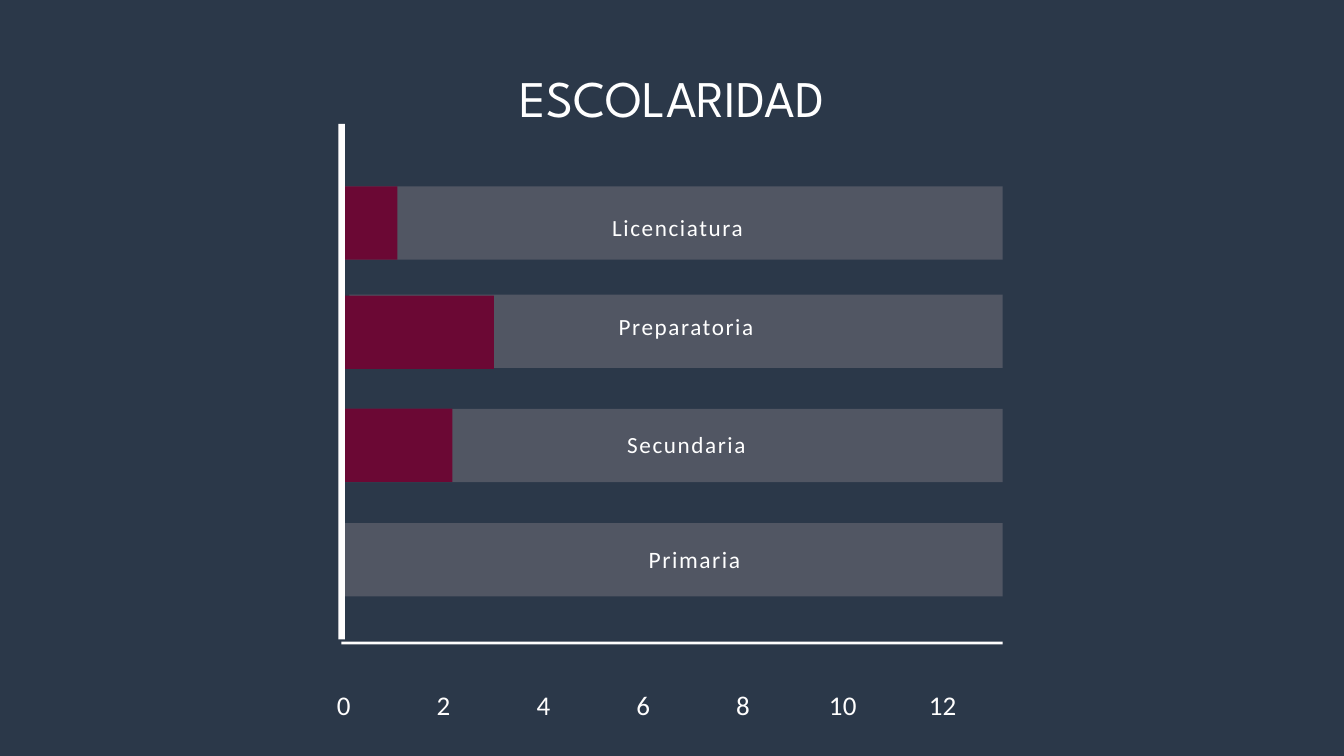
from dataclasses import dataclass

import lxml.etree
import pptx
import pptx.dml.color
import pptx.enum.shapes
import pptx.enum.text
import pptx.oxml.ns
import pptx.util

Pt = pptx.util.Pt
ALIGN = pptx.enum.text.PP_ALIGN

WHITE = "FFFFFF"
AXIS_WHITE = "FFFEFE"
TRACK_RIGHT = 1074.2
BAR_HEIGHT = 78.5


@dataclass(frozen=True)
class Level:
    name: str
    middle: float
    value_left: float
    value_width: float
    value_middle: float
    label_left: float
    label_top: float
    label_width: float = 370.8
    track_width: float = 708.5
    size: float = 24.8
    leading: float = 41.3
    align: ALIGN = ALIGN.CENTER


LEVELS = [
    Level("Licenciatura", 239, 365.4, 60.5, 239, 655.9, 217.4, align=ALIGN.LEFT),
    Level("Preparatoria", 355, 367.2, 162, 356, 637.2, 322.6,
          label_width=195.8, track_width=699.8),
    Level("Secundaria", 477.4, 365.8, 118.8, 477, 550.1, 449.3),
    Level("Primaria", 599.8, 365.8, 0, 599.8, 558.7, 572.4, size=25.2, leading=42.1),
]


def color(hex_code: str) -> pptx.dml.color.RGBColor:
    return pptx.dml.color.RGBColor.from_string(hex_code)


def add_bar(slide, left: float, top: float, width: float, height: float,
            fill: str, opacity: int = 100) -> None:
    bar = slide.shapes.add_shape(pptx.enum.shapes.MSO_SHAPE.RECTANGLE,
                                 Pt(left), Pt(top), Pt(width), Pt(height))
    bar.shadow.inherit = False
    bar.line.fill.background()
    bar.fill.solid()
    bar.fill.fore_color.rgb = color(fill)
    if opacity < 100:
        tint = bar.fill._xPr.find(".//" + pptx.oxml.ns.qn("a:srgbClr"))
        alpha = lxml.etree.SubElement(tint, pptx.oxml.ns.qn("a:alpha"))
        alpha.set("val", str(opacity * 1000))


def add_text(slide, text: str, *, left: float, top: float, width: float, height: float,
             size: float, leading: float, font: str = "Calibri", fill: str = WHITE,
             align: ALIGN = ALIGN.CENTER, spacing: float = 0) -> None:
    frame = slide.shapes.add_textbox(Pt(left), Pt(top), Pt(width), Pt(height)).text_frame
    frame.word_wrap = True
    frame.auto_size = pptx.enum.text.MSO_AUTO_SIZE.SHAPE_TO_FIT_TEXT
    frame.margin_left = frame.margin_right = frame.margin_top = frame.margin_bottom = Pt(0)
    paragraph = frame.paragraphs[0]
    paragraph.alignment = align
    paragraph.line_spacing = Pt(leading)
    run = paragraph.add_run()
    run.text = text
    run.font.size = Pt(size)
    run.font.name = font
    run.font.color.rgb = color(fill)
    if spacing:
        run._r.get_or_add_rPr().set("spc", str(round(spacing * 100)))


def main() -> None:
    deck = pptx.Presentation()
    deck.slide_width, deck.slide_height = Pt(1440), Pt(810)
    slide = deck.slides.add_slide(deck.slide_layouts[6])
    slide.background.fill.solid()
    slide.background.fill.fore_color.rgb = color("2B3849")

    add_text(slide, "ESCOLARIDAD", left=179.3, top=59.8, width=1081.4, height=72.7,
             size=55, leading=77, font="League Spartan")

    for level in LEVELS:
        add_bar(slide, TRACK_RIGHT - level.track_width, level.middle - BAR_HEIGHT / 2,
                level.track_width, BAR_HEIGHT, "D3BABD", opacity=23)
    for level in LEVELS:
        if level.value_width:
            add_bar(slide, level.value_left, level.value_middle - BAR_HEIGHT / 2,
                    level.value_width, BAR_HEIGHT, "6B0834")

    add_bar(slide, 362.5, 132.8, 7.2, 552.2, AXIS_WHITE)
    add_bar(slide, 365.8, 687.6, 708.5, 2.9, AXIS_WHITE)

    for level in LEVELS:
        add_text(slide, level.name, left=level.label_left, top=level.label_top,
                 width=level.label_width, height=36.7, size=level.size,
                 leading=level.leading, align=level.align, spacing=1.7)
    for position, tick in enumerate(range(0, 13, 2)):
        add_text(slide, str(tick), left=335.5 + 106.95 * position, top=728.6,
                 width=65.5, height=39.6, size=28.9, leading=44.2,
                 fill=AXIS_WHITE, spacing=0.3)

    deck.save("out.pptx")


if __name__ == "__main__":
    main()
